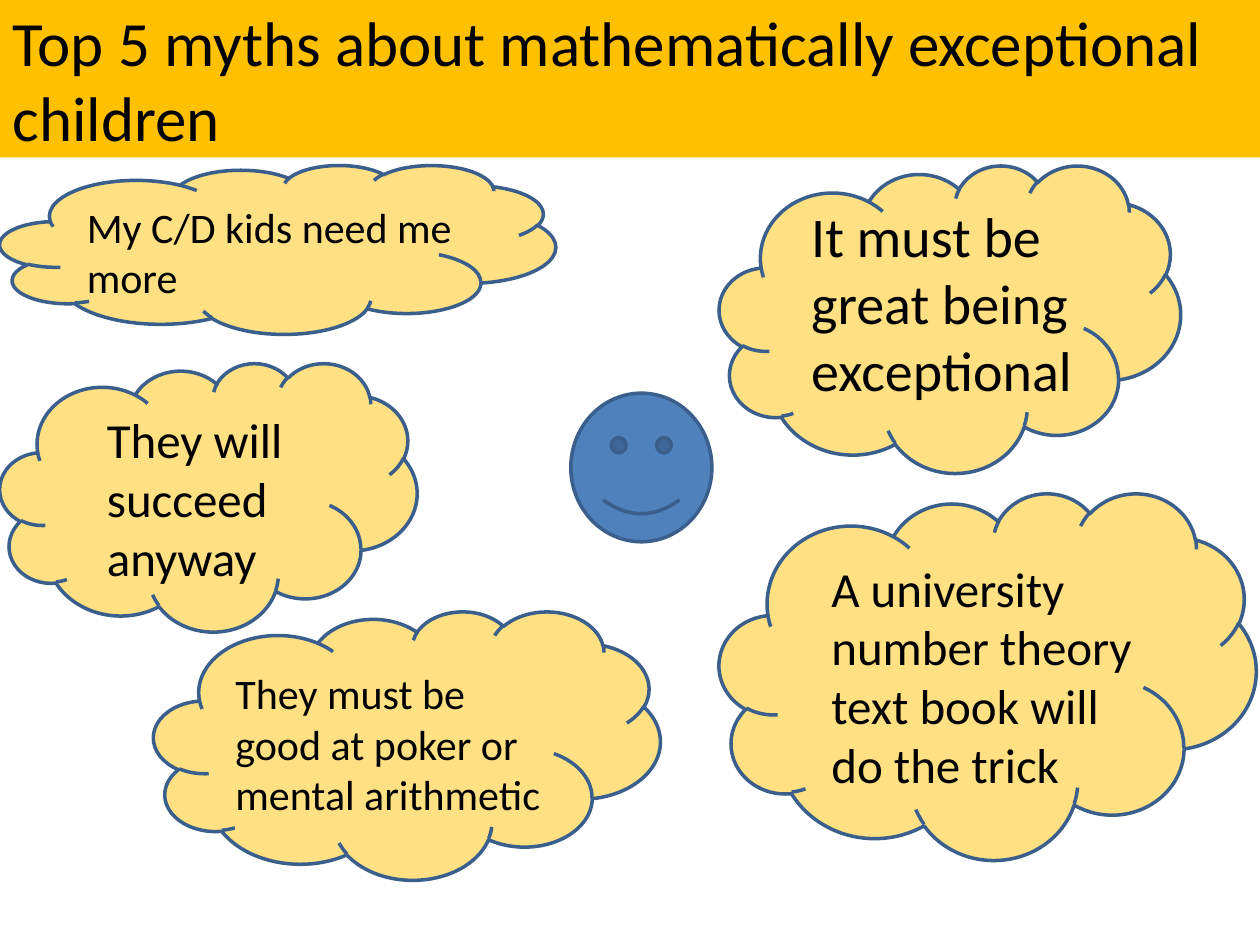
from lxml import etree
from pptx import Presentation
from pptx.dml.color import RGBColor
from pptx.enum.shapes import MSO_SHAPE as SHAPE
from pptx.enum.text import MSO_ANCHOR, MSO_AUTO_SIZE, PP_ALIGN
from pptx.oxml.ns import qn
from pptx.util import Inches, Pt

COLORS = {"gold": "FFC000", "blue": "4F81BD", "outline": "3A5F8C", "text": "000000"}


def write(tf, text, size, color="text", font="Calibri"):
    tf.word_wrap = True
    p = tf.paragraphs[0]
    p.alignment = PP_ALIGN.LEFT
    r = p.add_run()
    r.text = text
    r.font.size = Pt(size)
    r.font.name = font
    r.font.color.rgb = RGBColor.from_string(COLORS[color])


def add_figure(s, kind, box, fill, alpha=None):
    sp = s.shapes.add_shape(kind, *map(Inches, box))
    sp.shadow.inherit = False
    sp.fill.solid()
    sp.fill.fore_color.rgb = RGBColor.from_string(COLORS[fill])
    if alpha is not None:
        clr = sp.fill._xPr.find(qn("a:solidFill"))[0]
        etree.SubElement(clr, qn("a:alpha"), val=str(alpha * 1000))
    sp.line.color.rgb = RGBColor.from_string(COLORS["outline"])
    sp.line.width = Pt(2)


prs = Presentation()
prs.slide_width, prs.slide_height = Inches(10), Inches(7.5)
s = prs.slides.add_slide(prs.slide_layouts[5])

# Title band
title = s.shapes.title
title.left, title.top = Inches(0), Inches(0)
title.width, title.height = Inches(10), Inches(1.25)
title.fill.solid()
title.fill.fore_color.rgb = RGBColor.from_string(COLORS["gold"])
title.text_frame.vertical_anchor = MSO_ANCHOR.MIDDLE
title.text_frame.auto_size = MSO_AUTO_SIZE.NONE
write(title.text_frame, "Top 5 myths about mathematically exceptional children", 36)

# Myths: cloud box, text box, font size, wording
myths = [
    ((0, 2.88, 3.31, 2.13), (0.75, 3.2, 2.68, 1.51), 28, "They will succeed anyway"),
    ((5.71, 1.31, 3.66, 2.44), (6.34, 1.55, 2.44, 1.72), 32,
     "It must be great being exceptional"),
    ((1.22, 4.85, 4.02, 2.13), (1.77, 5.25, 2.76, 1.31), 24,
     "They must be good at poker or mental arithmetic"),
    ((5.71, 3.91, 4.26, 2.91), (6.5, 4.38, 2.76, 1.99), 28,
     "A university number theory text book will do the trick"),
    ((0, 1.31, 4.41, 1.34), (0.59, 1.55, 3.62, 0.91), 24, "My C/D kids need me more"),
]
for cloud_box, text_box, size, text in myths:
    add_figure(s, SHAPE.CLOUD, cloud_box, "gold", alpha=49)
    tf = s.shapes.add_textbox(*map(Inches, text_box)).text_frame
    tf.auto_size = MSO_AUTO_SIZE.SHAPE_TO_FIT_TEXT
    write(tf, text, size)

# Smiling child in the middle
add_figure(s, SHAPE.SMILEY_FACE, (4.53, 3.12, 1.12, 1.18), "blue")

prs.save("out.pptx")
